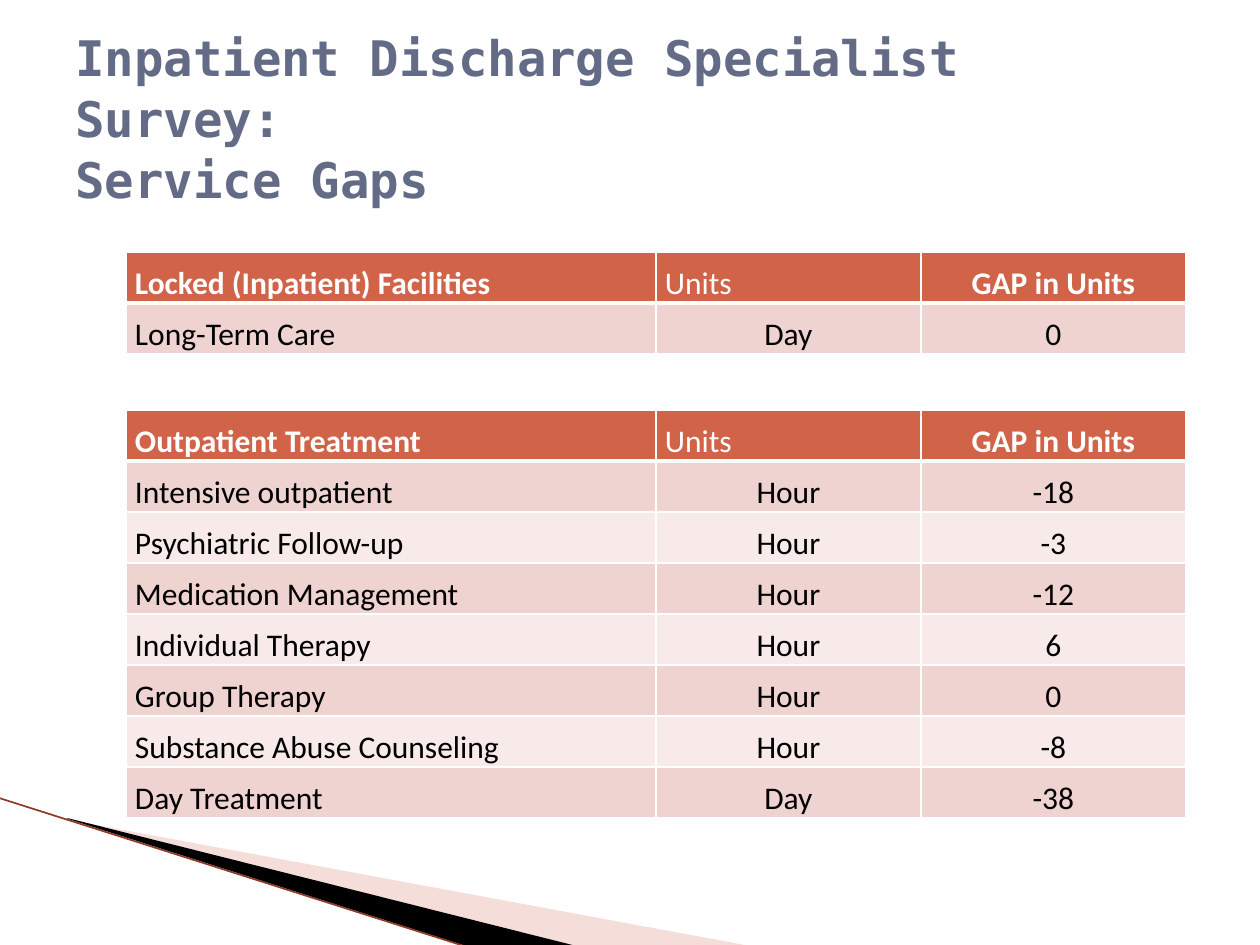
from lxml import etree
from pptx import Presentation, util as u
from pptx.dml.color import RGBColor
from pptx.enum import shapes, text
from pptx.oxml import ns

SCALE = u.Inches(1) // 126
ROW_HEIGHT = 51
COLUMN_WIDTHS = (530, 265, 265)
HEADER_FILL, BAND_FILLS = "D16349", ("EED3D0", "F7EAE9")
LOCKED = [
    ("Locked (Inpatient) Facilities", "Units", "GAP in Units"),
    ("Long-Term Care", "Day", "0"),
]
OUTPATIENT = [
    ("Outpatient Treatment", "Units", "GAP in Units"),
    ("Intensive outpatient", "Hour", "-18"),
    ("Psychiatric Follow-up", "Hour", "-3"),
    ("Medication Management", "Hour", "-12"),
    ("Individual Therapy", "Hour", "6"),
    ("Group Therapy", "Hour", "0"),
    ("Substance Abuse Counseling", "Hour", "-8"),
    ("Day Treatment", "Day", "-38"),
]


def px(length):
    return u.Emu(length * SCALE)


def paint(color_format, color):
    color_format.rgb = RGBColor.from_string(color)


def fill(part, color):
    part.fill.solid()
    paint(part.fill.fore_color, color)


def add_run(paragraph, words, font, size, color, bold):
    run = paragraph.add_run()
    run.text = words
    run.font.name, run.font.size, run.font.bold = font, u.Pt(size), bold
    paint(run.font.color, color)


def add_wedge(slide, left, top, points, color, opacity=100):
    corners = [(left + x, top + y) for x, y in points]
    builder = slide.shapes.build_freeform(*corners[0], scale=SCALE)
    builder.add_line_segments(corners[1:], close=True)
    wedge = builder.convert_to_shape()
    wedge.shadow.inherit = False
    fill(wedge, color)
    wedge.line.fill.background()
    if opacity < 100:
        tint = wedge._element.spPr.find(".//" + ns.qn("a:srgbClr"))
        etree.SubElement(tint, ns.qn("a:alpha"), val=str(opacity * 1000))


def add_corner_sweep(slide, left, top):
    add_wedge(slide, left, top, [(69, 22), (750, 148), (575, 148), (69, 21)], "E7ACA4", 40)
    add_wedge(slide, left, top, [(67, 20), (576, 148), (469, 149), (68, 21)], "000000")
    edge = slide.shapes.add_connector(
        shapes.MSO_CONNECTOR.STRAIGHT,
        px(left - 1), px(top), px(left + 467), px(top + 149))
    paint(edge.line.color, "8E3A29")
    edge.line.width = u.Pt(0.95)
    etree.SubElement(edge._element.spPr, ns.qn("a:effectLst"))


def add_title(slide, left, top, width, height):
    title = slide.shapes.add_textbox(px(left), px(top), px(width), px(height))
    frame = title.text_frame
    frame.word_wrap = True
    frame.vertical_anchor = text.MSO_ANCHOR.MIDDLE
    heading = frame.paragraphs[0]
    heading.line_spacing = 1.03
    style = ("DejaVu Sans Mono", 28, "646B86", True)
    add_run(heading, "Inpatient Discharge Specialist Survey: ", *style)
    heading.add_line_break()
    add_run(heading, "Service Gaps", *style)


def add_borders(cell, bottom_width):
    properties = cell._tc.get_or_add_tcPr()
    widths = {"L": 1, "R": 1, "T": 1, "B": bottom_width}
    for place, (side, width) in enumerate(widths.items()):
        border = etree.Element(ns.qn("a:ln" + side), w=str(u.Pt(width)))
        solid = etree.SubElement(border, ns.qn("a:solidFill"))
        etree.SubElement(solid, ns.qn("a:srgbClr"), val="FFFFFF")
        properties.insert(place, border)


def fill_cell(cell, words, row, column):
    header = row == 0
    fill(cell, HEADER_FILL if header else BAND_FILLS[(row - 1) % 2])
    add_borders(cell, 3 if header else 1)
    cell.margin_left = cell.margin_right = px(9)
    cell.margin_top = cell.margin_bottom = 0
    cell.vertical_anchor = text.MSO_ANCHOR.BOTTOM
    paragraph = cell.text_frame.paragraphs[0]
    paragraph.line_spacing = 1.15
    if column == 2 or (column == 1 and not header):
        paragraph.alignment = text.PP_ALIGN.CENTER
    add_run(paragraph, words, "Calibri", 18,
            "FFFFFF" if header else "000000", header and column != 1)


def add_gap_table(slide, left, top, entries):
    table = slide.shapes.add_table(
        len(entries), len(COLUMN_WIDTHS), px(left), px(top),
        px(sum(COLUMN_WIDTHS)), px(ROW_HEIGHT * len(entries))).table
    for column, width in zip(table.columns, COLUMN_WIDTHS):
        column.width = px(width)
    for row, entry in enumerate(entries):
        table.rows[row].height = px(ROW_HEIGHT)
        for column, words in enumerate(entry):
            fill_cell(table.cell(row, column), words, row, column)


def main():
    deck = Presentation()
    deck.slide_width, deck.slide_height = px(1260), px(945)
    slide = deck.slides.add_slide(deck.slide_layouts[6])
    add_corner_sweep(slide, 0, 798)
    add_title(slide, 63, 38, 1134, 158)
    add_gap_table(slide, 126, 252, LOCKED)
    add_gap_table(slide, 126, 410, OUTPATIENT)
    deck.save("out.pptx")


if __name__ == "__main__":
    main()
